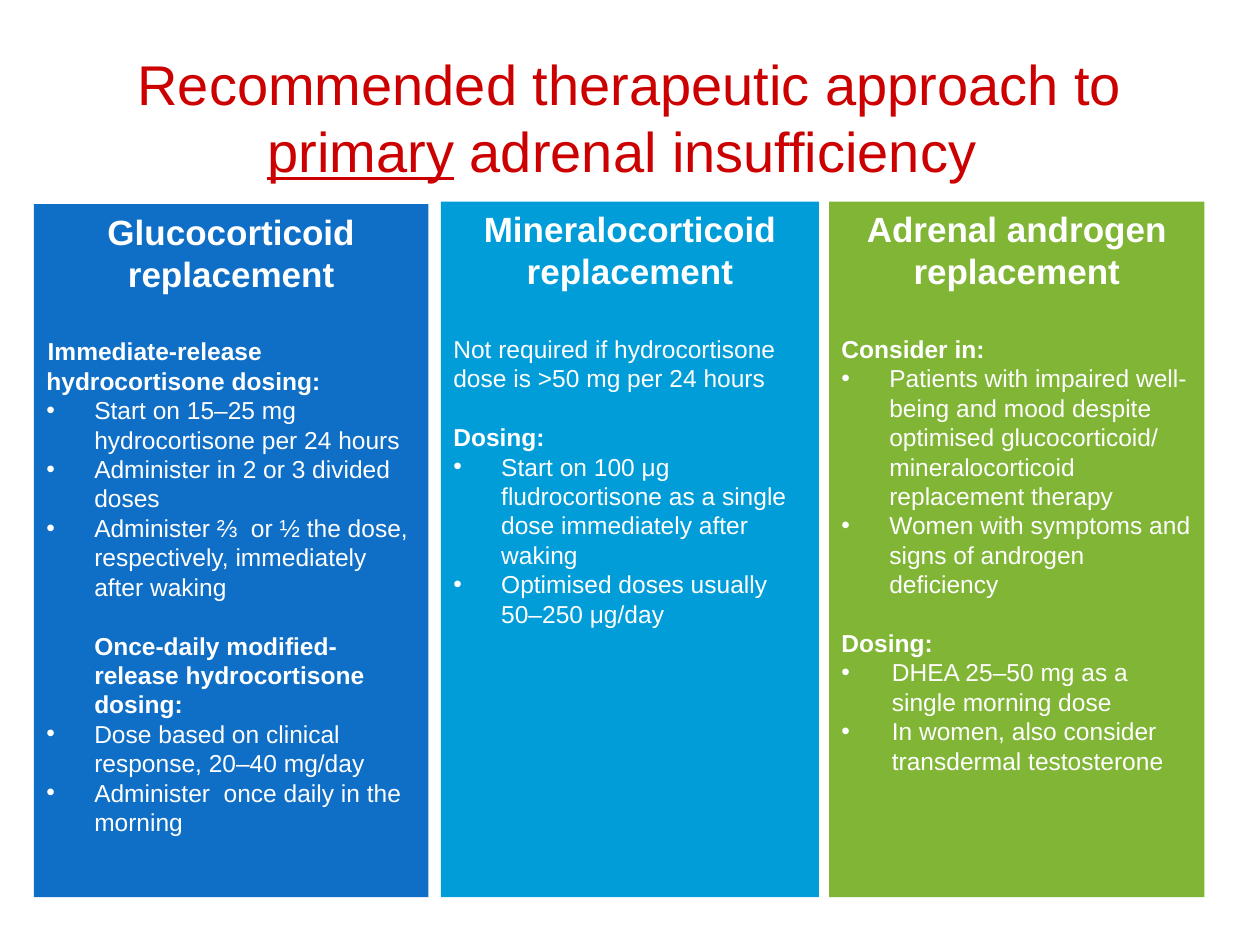
from dataclasses import dataclass

import pptx
import pptx.dml.color
import pptx.enum.shapes
import pptx.enum.text
import pptx.oxml
import pptx.oxml.ns
import pptx.util
from pptx.util import Inches

ALIGN = pptx.enum.text.PP_ALIGN
ANCHOR = pptx.enum.text.MSO_ANCHOR


@dataclass(frozen=True)
class Theme:
    font: str = "Arial"
    title: str = "CC0000"
    text: str = "FFFFFF"
    blue: str = "0F6FC6"
    cyan: str = "009DD9"
    green: str = "80B536"
    title_size: int = 32
    heading_size: int = 20
    body_size: int = 14
    heading_gap: float = 24
    section_gap: float = 16.8


THEME = Theme()


def rgb(value):
    return pptx.dml.color.RGBColor.from_string(value)


def add_text(p, text, size=THEME.body_size, color=THEME.text, bold=False, underline=False):
    """Append text to a paragraph, turning each newline into a line break."""
    for i, line in enumerate(text.split("\n")):
        if i:
            p.add_line_break()
        if not line:
            continue
        r = p.add_run()
        r.text = line
        r.font.name = THEME.font
        r.font.size = pptx.util.Pt(size)
        r.font.color.rgb = rgb(color)
        r.font.bold = bold
        r.font.underline = underline


def set_indent(p, left, first=0, bullet=False):
    pPr = p._p.get_or_add_pPr()
    pPr.set("marL", str(Inches(left)))
    pPr.set("indent", str(Inches(first)))
    if bullet:
        ns = pptx.oxml.ns.nsdecls("a")
        pPr.append(pptx.oxml.parse_xml(f'<a:buFont {ns} typeface="Arial"/>'))
        pPr.append(pptx.oxml.parse_xml(f'<a:buChar {ns} char="•"/>'))


def add_title(slide):
    sp = slide.shapes.add_textbox(Inches(0.5), Inches(0.3), Inches(9), Inches(1.25))
    tf = sp.text_frame
    tf.word_wrap = False
    tf.vertical_anchor = ANCHOR.MIDDLE
    p = tf.paragraphs[0]
    p.alignment = ALIGN.CENTER
    style = {"size": THEME.title_size, "color": THEME.title}
    add_text(p, "Recommended therapeutic approach to\n", **style)
    add_text(p, "primary", underline=True, **style)
    add_text(p, " adrenal insufficiency ", **style)


def add_section(tf, title, bullets, gap, bold=True, left=0, first=0, hang=0.38):
    """Add a section lead followed by its hanging bullets."""
    p = tf.add_paragraph()
    p.alignment = ALIGN.LEFT
    p.space_before = pptx.util.Pt(gap)
    set_indent(p, left, first)
    add_text(p, title, bold=bold)
    for bullet in bullets:
        p = tf.add_paragraph()
        p.alignment = ALIGN.LEFT
        set_indent(p, hang, -hang, bullet=True)
        add_text(p, bullet)


def add_panel(slide, box, color, heading, sections):
    sp = slide.shapes.add_shape(
        pptx.enum.shapes.MSO_SHAPE.RECTANGLE, *(Inches(v) for v in box))
    sp.shadow.inherit = False
    sp.fill.solid()
    sp.fill.fore_color.rgb = rgb(color)
    sp.line.fill.background()
    tf = sp.text_frame
    tf.word_wrap = True
    tf.vertical_anchor = ANCHOR.TOP
    p = tf.paragraphs[0]
    p.alignment = ALIGN.CENTER
    add_text(p, heading, size=THEME.heading_size, bold=True)
    for i, section in enumerate(sections):
        add_section(tf, gap=THEME.section_gap if i else THEME.heading_gap, **section)


PANELS = [
    ((0.27, 1.62, 3.13, 5.5), THEME.blue, "Glucocorticoid replacement", [
        {"title": "Immediate-release hydrocortisone dosing:", "first": 0.01, "bullets": [
            "Start on 15–25 mg \nhydrocortisone per 24 hours",
            "Administer in 2 or 3 divided doses",
            "Administer ⅔  or ½ the dose, respectively, immediately after waking"]},
        {"title": "Once-daily modified-release hydrocortisone dosing:", "left": 0.38, "bullets": [
            "Dose based on clinical response, 20–40 mg/day",
            "Administer  once daily in the morning"]},
    ]),
    ((3.5, 1.6, 3, 5.52), THEME.cyan, "Mineralocorticoid replacement", [
        {"title": "Not required if hydrocortisone dose is >50 mg per 24 hours",
         "bold": False, "bullets": []},
        {"title": "Dosing:", "bullets": [
            "Start on 100 μg fludrocortisone as a single dose immediately after waking",
            "Optimised doses usually 50–250 μg/day"]},
    ]),
    ((6.58, 1.6, 2.98, 5.52), THEME.green, "Adrenal androgen replacement", [
        {"title": "Consider in:", "bullets": [
            "Patients with impaired well-being and mood despite optimised glucocorticoid/ "
            "mineralocorticoid replacement therapy",
            "Women with symptoms and signs of androgen deficiency"]},
        {"title": "Dosing:", "hang": 0.4, "bullets": [
            "DHEA 25–50 mg as a single morning dose",
            "In women, also consider transdermal testosterone"]},
    ]),
]


def main():
    prs = pptx.Presentation()
    prs.slide_width, prs.slide_height = Inches(10), Inches(7.5)
    slide = prs.slides.add_slide(prs.slide_layouts[6])
    add_title(slide)
    for panel in PANELS:
        add_panel(slide, *panel)
    prs.save("out.pptx")


if __name__ == "__main__":
    main()
